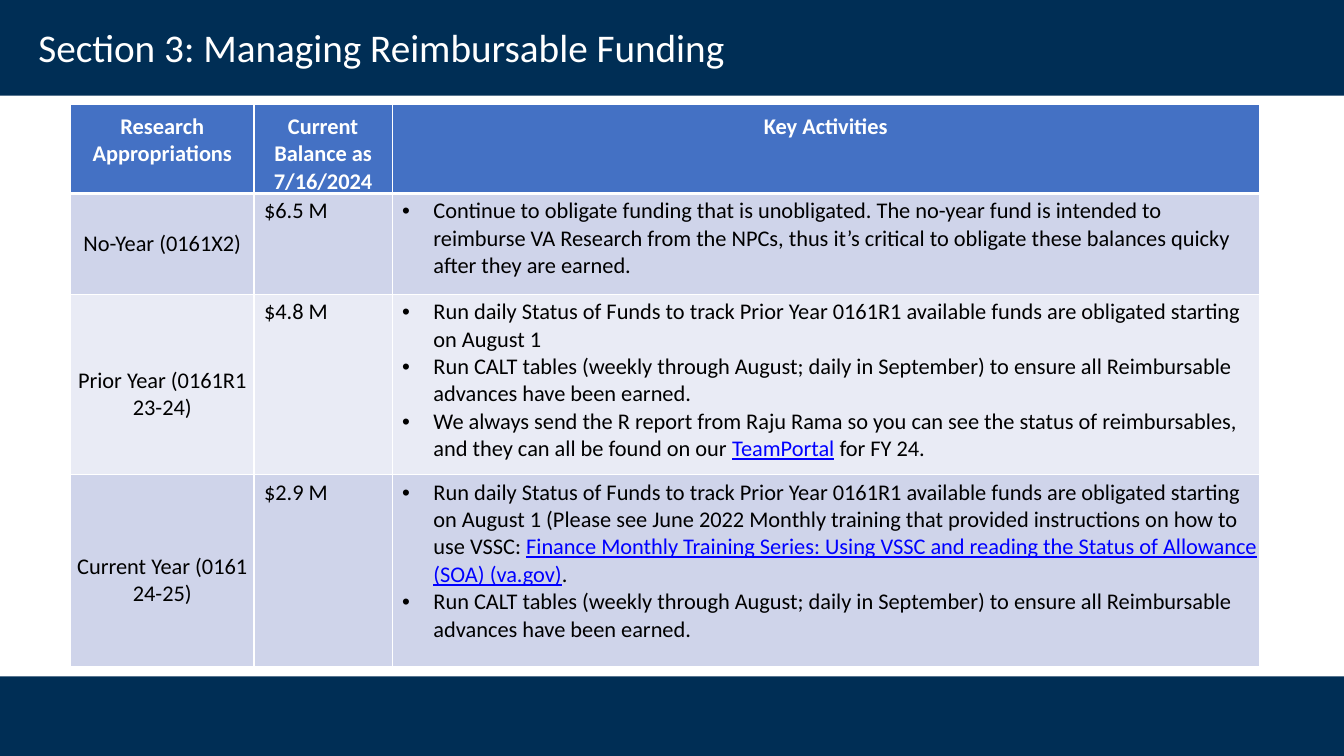
"""Build the slide on managing reimbursable funding."""
from lxml import etree
from pptx import Presentation
from pptx.dml.color import RGBColor
from pptx.enum.shapes import MSO_SHAPE
from pptx.enum.text import MSO_ANCHOR, PP_ALIGN
from pptx.oxml.ns import qn
from pptx.util import Inches, Pt

RECTANGLE = MSO_SHAPE.RECTANGLE
TOP, MIDDLE = MSO_ANCHOR.TOP, MSO_ANCHOR.MIDDLE
LEFT, CENTER = PP_ALIGN.LEFT, PP_ALIGN.CENTER

TITLE = "Section 3: Managing Reimbursable Funding"
HEADINGS = ["Research Appropriations", "Current Balance as 7/16/2024", "Key Activities"]
CALT = ["Run CALT tables (weekly through August; daily in September) to ensure all "
        "Reimbursable advances have been earned."]
DAILY = ("Run daily Status of Funds to track Prior Year 0161R1 available funds are "
         "obligated starting on August 1")
FUNDS = [
    ("No-Year (0161X2)", "$6.5 M", [
        ["Continue to obligate funding that is unobligated. The no-year fund is intended to "
         "reimburse VA Research from the NPCs, thus it’s critical to obligate these balances "
         "quicky after they are earned."],
    ]),
    ("Prior Year (0161R1 23-24)", "$4.8 M", [
        [DAILY],
        CALT,
        ["We always send the R report from Raju Rama so you can see the status of "
         "reimbursables, and they can all be found on our ", "TeamPortal", " for FY 24."],
    ]),
    ("Current Year (0161 24-25)", "$2.9 M", [
        [DAILY + " (Please see June 2022 Monthly training that provided instructions on how "
         "to use VSSC: ",
         "Finance Monthly Training Series: Using VSSC and reading the Status of Allowance "
         "(SOA) (va.gov)", "."],
        CALT,
    ]),
]

WIDTH, HEIGHT = 13.33, 7.5
HEADER_BAND, FOOTER_BAND = 0.95, 0.79
COLUMNS = [1.82, 1.37, 8.6]
ROWS = [0.86, 1, 1.79, 1.9]
NAME_DROPS = [0, 0.2, 0.2]
NAVY, BLUE, WHITE, BLACK, LINK = "002E55", "4471C4", "FFFFFF", "000000", "0000FF"
BANDS = ["CFD4EA", "E9EBF5"]
FONT = "Calibri"


def color(code):
    return RGBColor.from_string(code)


def add_band(slide, top, height):
    band = slide.shapes.add_shape(RECTANGLE, 0, Inches(top), Inches(WIDTH), Inches(height))
    band.shadow.inherit = False
    band.fill.solid()
    band.fill.fore_color.rgb = color(NAVY)
    band.line.fill.background()


def write(paragraph, pieces, size, ink, align=LEFT, bold=False, indent=0, hang=0):
    """Write pieces of text, every second one as a link."""
    properties = paragraph._p.get_or_add_pPr()
    properties.set("marL", str(Inches(indent)))
    properties.set("indent", str(-Inches(hang)))
    if hang:
        etree.SubElement(properties, qn("a:buFont"), typeface="Arial")
        etree.SubElement(properties, qn("a:buChar"), char="•")
    paragraph.alignment = align
    font = paragraph.font
    font.name, font.size, font.bold = FONT, Pt(size), bold
    font.color.rgb = color(ink)
    for position, piece in enumerate(pieces):
        run = paragraph.add_run()
        run.text = piece
        if position % 2:
            run.font.underline = True
            run.font.color.rgb = color(LINK)


def style_cell(cell, fill, top_line, bottom_line, margin_top, anchor=TOP):
    properties = cell._tc.get_or_add_tcPr()
    for side, points in zip("LRTB", (1, 1, top_line, bottom_line)):
        line = etree.SubElement(properties, qn("a:ln" + side), w=str(Pt(points)))
        paint = etree.SubElement(line, qn("a:solidFill"))
        etree.SubElement(paint, qn("a:srgbClr"), val=WHITE)
    cell.fill.solid()
    cell.fill.fore_color.rgb = color(fill)
    cell.margin_left = cell.margin_right = cell.margin_bottom = 0
    cell.margin_top = Inches(margin_top)
    cell.vertical_anchor = anchor


def add_title(slide):
    box = slide.shapes.add_textbox(Inches(0.16), Inches(0.17), Inches(12.72), Inches(0.53))
    frame = box.text_frame
    frame.word_wrap = True
    frame.margin_left = frame.margin_right = frame.margin_bottom = 0
    frame.margin_top = Inches(0.06)
    write(frame.paragraphs[0], [TITLE], 28, WHITE, indent=0.22)


def add_funds(slide):
    table = slide.shapes.add_table(len(ROWS), len(COLUMNS), Inches(0.7), Inches(1.04),
                                   Inches(sum(COLUMNS)), Inches(sum(ROWS))).table
    table.first_row = table.horz_banding = False
    for column, width in zip(table.columns, COLUMNS):
        column.width = Inches(width)
    for row, height in zip(table.rows, ROWS):
        row.height = Inches(height)

    for cell, heading in zip(table.rows[0].cells, HEADINGS):
        style_cell(cell, BLUE, 1, 3, 0.08)
        write(cell.text_frame.paragraphs[0], [heading], 16, WHITE, CENTER, bold=True)

    for index, (fund, balance, activities) in enumerate(FUNDS):
        fill = BANDS[index % 2]
        top_line = 1 if index else 3
        name_cell, balance_cell, activity_cell = table.rows[index + 1].cells
        style_cell(name_cell, fill, top_line, 1, NAME_DROPS[index], MIDDLE)
        write(name_cell.text_frame.paragraphs[0], [fund], 16, BLACK, CENTER)
        style_cell(balance_cell, fill, top_line, 1, 0.04)
        write(balance_cell.text_frame.paragraphs[0], [balance], 16, BLACK, indent=0.1)
        style_cell(activity_cell, fill, top_line, 1, 0.04)
        frame = activity_cell.text_frame
        for order, pieces in enumerate(activities):
            paragraph = frame.add_paragraph() if order else frame.paragraphs[0]
            write(paragraph, pieces, 16, BLACK, indent=0.41, hang=0.31)


def main():
    deck = Presentation()
    deck.slide_width, deck.slide_height = Inches(WIDTH), Inches(HEIGHT)
    slide = deck.slides.add_slide(deck.slide_layouts[6])
    add_band(slide, 0, HEADER_BAND)
    add_band(slide, HEIGHT - FOOTER_BAND, FOOTER_BAND)
    add_title(slide)
    add_funds(slide)
    deck.save("out.pptx")


if __name__ == "__main__":
    main()
